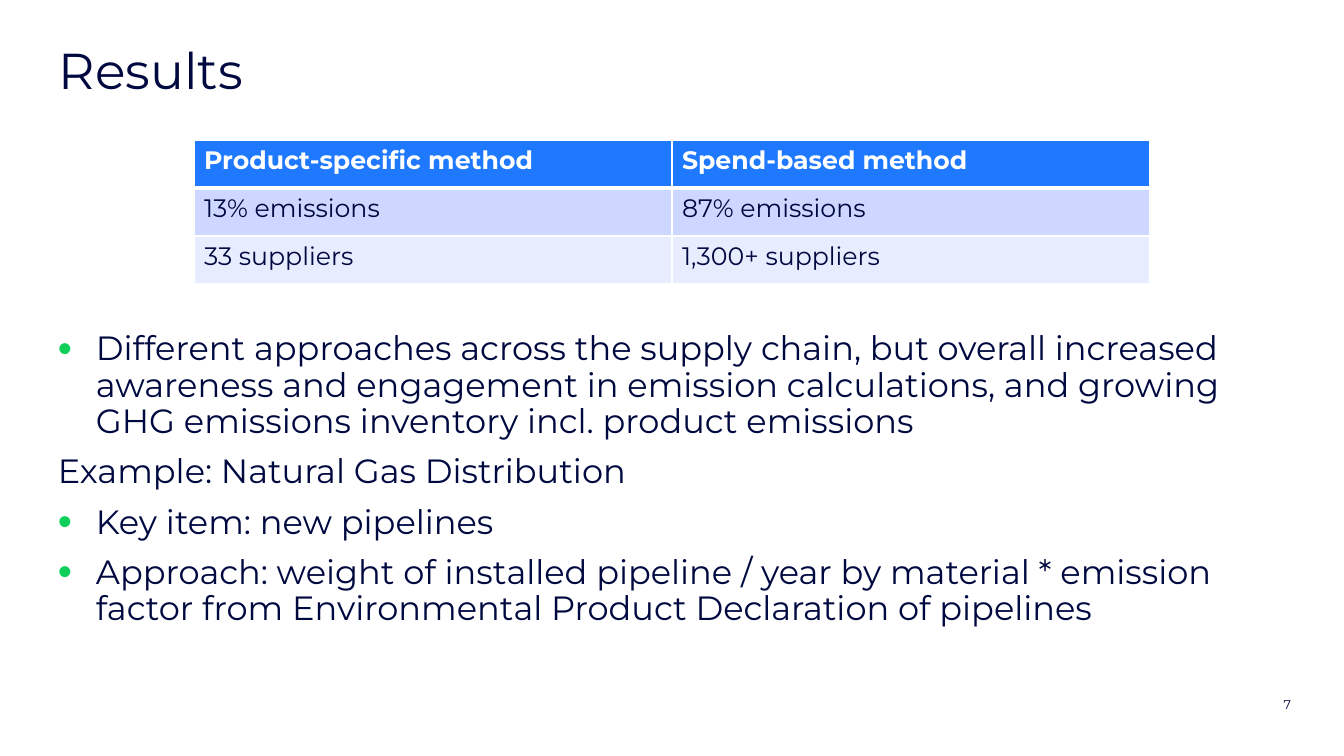
from lxml.etree import SubElement
from pptx import Presentation
from pptx.dml.color import RGBColor
from pptx.enum.text import MSO_ANCHOR, PP_ALIGN
from pptx.oxml.ns import qn
from pptx.util import Pt

PX = 914400 / 100.8
NAVY, WHITE, BLUE, GREEN = "000840", "FFFFFF", "1F79FF", "0DCF59"
BANDS = ["CDD7FF", "E8ECFF"]
METHODS = [
    ["Product-specific method", "Spend-based method"],
    ["13% emissions", "87% emissions"],
    ["33 suppliers", "1,300+ suppliers"],
]
FINDINGS = [
    ("Different approaches across the supply chain, but overall increased awareness "
     "and engagement in emission calculations, and growing GHG emissions inventory "
     "incl. product emissions", True),
    ("Example: Natural Gas Distribution", False),
    ("Key item: new pipelines", True),
    ("Approach: weight of installed pipeline / year by material * emission factor "
     "from Environmental Product Declaration of pipelines", True),
]


def px(n):
    """Turn pixels into EMU."""
    return round(n * PX)


def color(hex_string):
    """Turn a hex string into a colour."""
    return RGBColor.from_string(hex_string)


def style(obj, formats):
    """Set every attribute in a dict of format values."""
    for name, value in formats.items():
        setattr(obj, name, value)


def write(p, text, size, fill=NAVY, bold=False):
    """Add one formatted run to a paragraph."""
    r = p.add_run()
    r.text = text
    style(r.font, {"name": "Montserrat", "size": Pt(size), "bold": bold})
    r.font.color.rgb = color(fill)


def add_box(s, box, anchor=MSO_ANCHOR.TOP):
    """Add a wrapping text box and return its text frame."""
    tf = s.shapes.add_textbox(*map(px, box)).text_frame
    style(tf, {"word_wrap": True, "vertical_anchor": anchor})
    return tf


def add_label(s, box, text, size, formats):
    """Add a single line of text centred on its height."""
    p = add_box(s, box, MSO_ANCHOR.MIDDLE).paragraphs[0]
    style(p, formats)
    write(p, text, size)


def add_bullet(p):
    """Give a paragraph a green bullet with a hanging indent."""
    pPr = p._p.get_or_add_pPr()
    pPr.set("marL", str(px(38)))
    pPr.set("indent", str(px(-38)))
    SubElement(SubElement(pPr, qn("a:buClr")), qn("a:srgbClr"), val=GREEN)
    SubElement(pPr, qn("a:buSzPct"), val="120000")
    SubElement(pPr, qn("a:buFont"), typeface="Arial")
    SubElement(pPr, qn("a:buChar"), char="•")


def add_findings(s, box, findings):
    """Add the body text, bulleted where asked."""
    tf = add_box(s, box)
    for i, (text, bulleted) in enumerate(findings):
        p = tf.add_paragraph() if i else tf.paragraphs[0]
        if bulleted:
            add_bullet(p)
        style(p, {"line_spacing": 0.9, "space_before": Pt(10 if i else 0)})
        write(p, text, 24)


def add_borders(cell, widths):
    """Draw white cell borders with widths in points by side."""
    tcPr = cell._tc.get_or_add_tcPr()
    for side, width in widths.items():
        ln = SubElement(tcPr, qn(f"a:ln{side}"), w=str(Pt(width)))
        SubElement(SubElement(ln, qn("a:solidFill")), qn("a:srgbClr"), val=WHITE)


def add_methods(s, box, rows):
    """Add the table that compares the two methods."""
    table = s.shapes.add_table(len(rows), len(rows[0]), *map(px, box)).table
    for i, row in enumerate(rows):
        head = i == 0
        for j, text in enumerate(row):
            cell = table.cell(i, j)
            add_borders(cell, {"L": 1, "R": 1, "T": 3 if i == 1 else 1, "B": 3 if head else 1})
            cell.fill.solid()
            cell.fill.fore_color.rgb = color(BLUE if head else BANDS[i - 1])
            write(cell.text_frame.paragraphs[0], text, 18, WHITE if head else NAVY, head)


def main():
    """Build the results slide."""
    prs = Presentation()
    style(prs, {"slide_width": px(1344), "slide_height": px(756)})
    s = prs.slides.add_slide(prs.slide_layouts[6])
    add_label(s, (999, 684, 302, 40), "7", 9, {"alignment": PP_ALIGN.RIGHT})
    add_findings(s, (48, 327, 1253, 324), FINDINGS)
    add_label(s, (49, 40, 1253, 67), "Results", 36, {"line_spacing": 0.9})
    add_methods(s, (194, 140, 956, 144), METHODS)
    prs.save("out.pptx")


if __name__ == "__main__":
    main()
